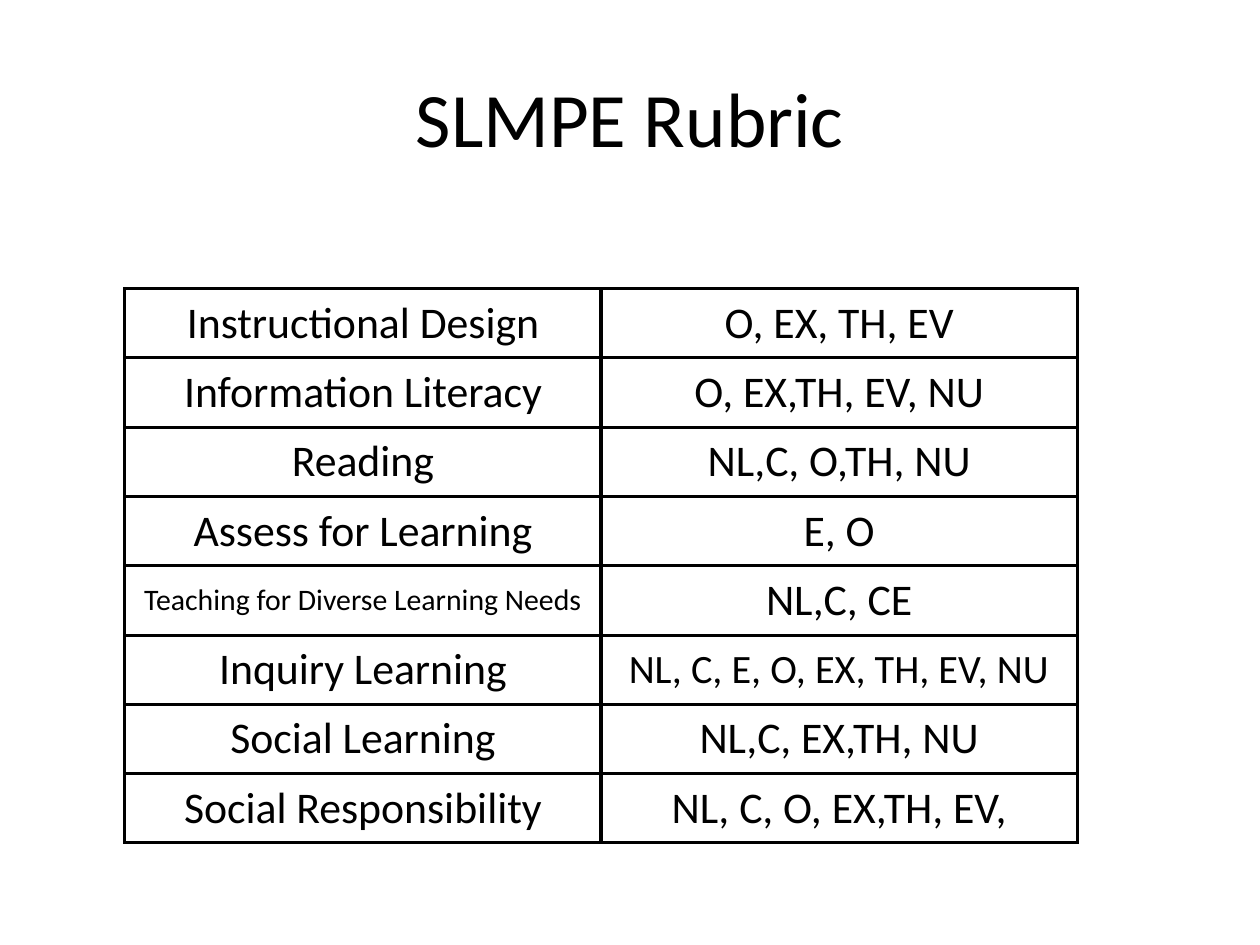
from lxml.etree import SubElement
from pptx import Presentation
from pptx.dml.color import RGBColor
from pptx.enum.text import MSO_ANCHOR as Anchor, PP_ALIGN as Align
from pptx.oxml.ns import qn
from pptx.util import Inches, Pt

COLORS = {"ink": "000000", "border": "000000", "paper": "FFFFFF"}
FONT = "Calibri"
CELL_SIZE = 25
COLUMN_WIDTH, ROW_HEIGHT = 3.78, 0.55
CELL_MARGIN = 0.04

RUBRIC = [
    ("Instructional Design", "O, EX, TH, EV"),
    ("Information Literacy", "O, EX,TH, EV, NU"),
    ("Reading", "NL,C, O,TH, NU"),
    ("Assess for Learning", "E, O"),
    ("Teaching for Diverse Learning Needs", "NL,C, CE"),
    ("Inquiry Learning", "NL, C, E, O, EX, TH, EV, NU"),
    ("Social Learning", "NL,C, EX,TH, NU"),
    ("Social Responsibility", "NL, C, O, EX,TH, EV,"),
]
# Long entries are set smaller to stay on one line
SMALLER_SIZES = {
    "Teaching for Diverse Learning Needs": 17,
    "NL, C, E, O, EX, TH, EV, NU": 23,
}


def write_text(frame, text, size=CELL_SIZE, color="ink", align=Align.CENTER):
    frame.word_wrap = True
    paragraph = frame.paragraphs[0]
    paragraph.alignment = align
    run = paragraph.add_run()
    run.text = text
    run.font.name = FONT
    run.font.size = Pt(size)
    run.font.color.rgb = RGBColor.from_string(COLORS[color])


def add_title(slide, text):
    title = slide.shapes.add_textbox(Inches(0.5), Inches(0.3), Inches(9), Inches(1.25))
    title.text_frame.vertical_anchor = Anchor.MIDDLE
    write_text(title.text_frame, text, size=44)


def draw_borders(cell, width=2):
    properties = cell._tc.get_or_add_tcPr()
    for side in ("lnL", "lnR", "lnT", "lnB"):
        line = SubElement(properties, qn(f"a:{side}"), w=str(Pt(width)))
        fill = SubElement(line, qn("a:solidFill"))
        SubElement(fill, qn("a:srgbClr"), val=COLORS["border"])


def fill_cell(cell, text):
    draw_borders(cell)
    cell.fill.background()
    cell.vertical_anchor = Anchor.MIDDLE
    cell.margin_left = cell.margin_right = Inches(CELL_MARGIN)
    cell.margin_top = cell.margin_bottom = Inches(CELL_MARGIN)
    write_text(cell.text_frame, text, size=SMALLER_SIZES.get(text, CELL_SIZE))


def add_rubric(slide, entries):
    row_count, column_count = len(entries), len(entries[0])
    rubric = slide.shapes.add_table(
        row_count, column_count, Inches(0.99), Inches(2.29),
        Inches(COLUMN_WIDTH * column_count), Inches(ROW_HEIGHT * row_count),
    ).table
    rubric.first_row = rubric.horz_banding = False
    for row, entry in zip(rubric.rows, entries):
        for cell, text in zip(row.cells, entry):
            fill_cell(cell, text)


def main():
    deck = Presentation()
    deck.slide_width, deck.slide_height = Inches(10), Inches(7.5)
    slide = deck.slides.add_slide(deck.slide_layouts[6])
    background = slide.background.fill
    background.solid()
    background.fore_color.rgb = RGBColor.from_string(COLORS["paper"])

    # Heading
    add_title(slide, "SLMPE Rubric")

    # Areas and their codes
    add_rubric(slide, RUBRIC)

    deck.save("out.pptx")


if __name__ == "__main__":
    main()
